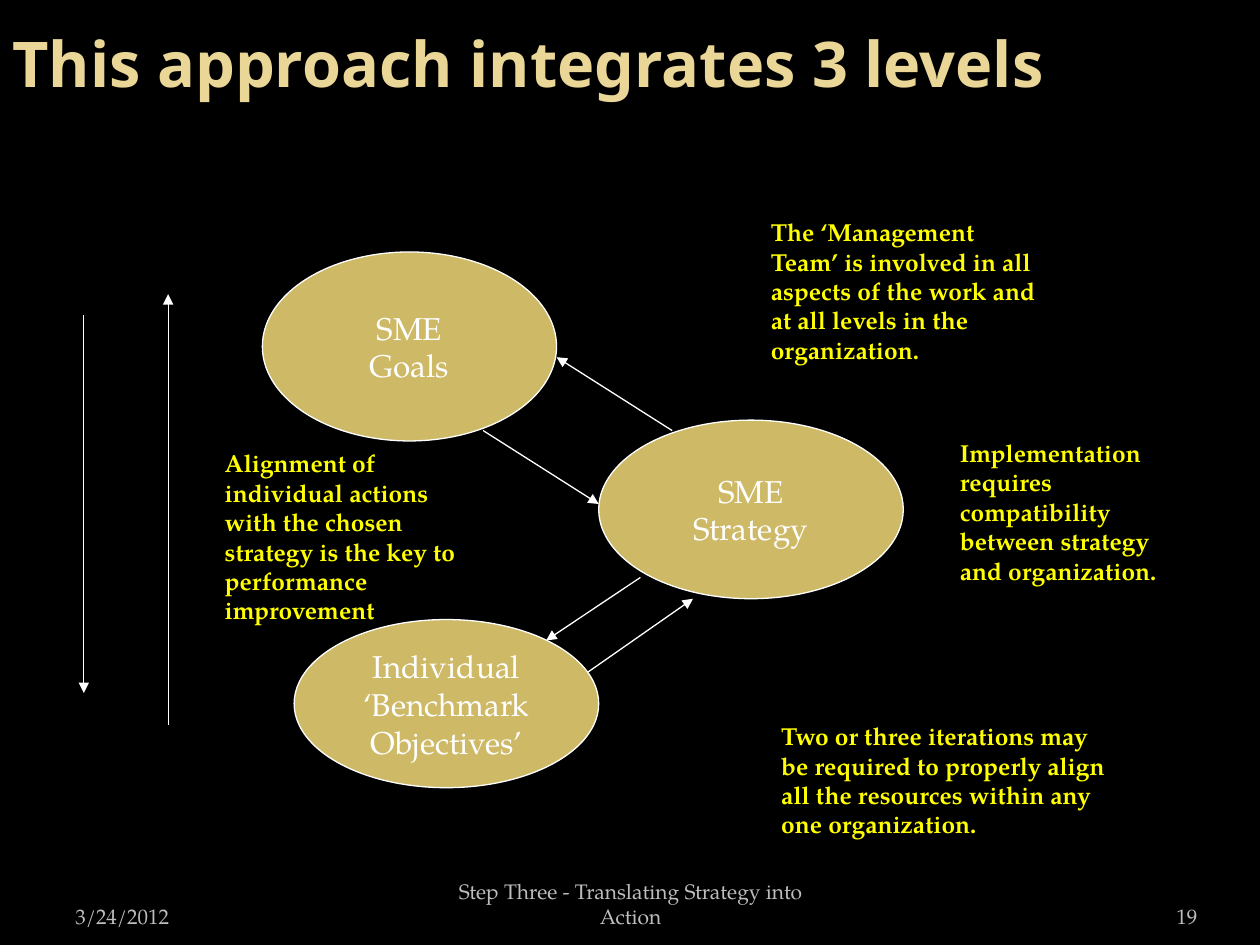
from lxml import etree
from pptx import Presentation
from pptx.dml.color import RGBColor
from pptx.enum.shapes import MSO_CONNECTOR, MSO_SHAPE
from pptx.enum.text import MSO_ANCHOR, MSO_AUTO_SIZE, PP_ALIGN
from pptx.oxml.ns import qn
from pptx.util import Cm, Pt

OVAL, STRAIGHT = MSO_SHAPE.OVAL, MSO_CONNECTOR.STRAIGHT
TOP, MIDDLE, BOTTOM = MSO_ANCHOR.TOP, MSO_ANCHOR.MIDDLE, MSO_ANCHOR.BOTTOM
LEFT, CENTER, RIGHT = PP_ALIGN.LEFT, PP_ALIGN.CENTER, PP_ALIGN.RIGHT
NO_FIT, GROW = MSO_AUTO_SIZE.NONE, MSO_AUTO_SIZE.SHAPE_TO_FIT_TEXT
TITLE_ONLY = 5

COLORS = {
    "background": "000000",
    "title": "EAD696",
    "oval": "CEB966",
    "white": "FFFFFF",
    "note": "FFFF00",
    "footer": "BDBDBD",
}
HEADING_FONT, BODY_FONT = "Noto Sans", "TeX Gyre Pagella"
WIDE_INSETS = (0.3, 0.15)
PLAIN_INSETS = (0.25, 0.13)


def color(name):
    return RGBColor.from_string(COLORS[name])


class SlideBuilder:
    """Holds the style and the current slide."""

    def __init__(self, presentation):
        layout = presentation.slide_layouts[TITLE_ONLY]
        self.slide = presentation.slides.add_slide(layout)
        self.shapes = self.slide.shapes
        fill = self.slide.background.fill
        fill.solid()
        fill.fore_color.rgb = color("background")

    def set_text(self, shape, lines, size, color_name, font=BODY_FONT, bold=False,
                 align=LEFT, anchor=TOP, insets=PLAIN_INSETS, wrap=True, fit=NO_FIT):
        frame = shape.text_frame
        frame.text = "\n".join(lines)
        horizontal, vertical = map(Cm, insets)
        frame_format = {
            "margin_left": horizontal, "margin_right": horizontal,
            "margin_top": vertical, "margin_bottom": vertical,
            "vertical_anchor": anchor, "word_wrap": wrap, "auto_size": fit,
        }
        for name, value in frame_format.items():
            setattr(frame, name, value)
        font_format = {"name": font, "size": Pt(size), "bold": bold}
        for paragraph in frame.paragraphs:
            paragraph.alignment = align
            for run in paragraph.runs:
                for name, value in font_format.items():
                    setattr(run.font, name, value)
                run.font.color.rgb = color(color_name)

    def title(self, text, left, top, width, height):
        title = self.shapes.title
        position = {"left": left, "top": top, "width": width, "height": height}
        for name, value in position.items():
            setattr(title, name, Cm(value))
        self.set_text(title, [text], 36, "title", font=HEADING_FONT, bold=True,
                      anchor=MIDDLE)

    def text_box(self, text, box, **style):
        shape = self.shapes.add_textbox(*map(Cm, box))
        self.set_text(shape, [text], **style)

    def footer(self, text, left, width, align, insets=PLAIN_INSETS):
        self.text_box(text, (left, 17.83, width, 1.02), size=12,
                      color_name="footer", align=align, anchor=BOTTOM,
                      insets=insets)

    def note(self, text, *box):
        self.text_box(text, box, size=14, color_name="note", bold=True,
                      insets=WIDE_INSETS, fit=GROW)

    def oval(self, lines, *box):
        shape = self.shapes.add_shape(OVAL, *map(Cm, box))
        shape.shadow.inherit = False
        shape.fill.solid()
        shape.fill.fore_color.rgb = color("oval")
        self.outline(shape)
        self.set_text(shape, lines, 18, "white", align=CENTER, anchor=MIDDLE,
                      insets=WIDE_INSETS, wrap=False)

    def arrow(self, *ends):
        connector = self.shapes.add_connector(STRAIGHT, *map(Cm, ends))
        self.outline(connector)
        properties = connector.element.spPr
        etree.SubElement(properties.find(qn("a:ln")), qn("a:tailEnd"),
                         type="triangle")
        etree.SubElement(properties, qn("a:effectLst"))

    def outline(self, shape):
        shape.line.color.rgb = color("white")
        shape.line.width = Pt(0.75)


def main():
    presentation = Presentation()
    presentation.slide_width, presentation.slide_height = Cm(25.4), Cm(19.05)
    builder = SlideBuilder(presentation)

    # Title
    builder.title("This approach integrates 3 levels", 0, -0.64, 25.4, 3.81)

    # Footer
    builder.footer("3/24/2012", 1.27, 5.92, LEFT)
    builder.footer("Step Three - Translating Strategy into Action",
                   8.69, 8.05, CENTER)
    builder.footer("19", 22.02, 2.12, RIGHT, insets=(0, 0.13))

    # Three levels
    builder.oval(["Individual", "‘Benchmark", "Objectives’"],
                 5.93, 12.49, 6.14, 3.39)
    builder.oval(["SME", "Strategy"], 12.07, 8.47, 6.14, 3.6)
    builder.oval(["SME", "Goals"], 5.29, 5.08, 5.93, 3.81)

    # Arrows between the levels, then the two long ones at the left
    for ends in (
        (9.74, 8.68, 12.07, 10.16),
        (12.91, 11.64, 11.01, 12.91),
        (11.85, 13.55, 13.97, 12.07),
        (13.55, 8.68, 11.22, 7.2),
        (1.69, 6.35, 1.69, 13.97),
        (3.39, 14.61, 3.39, 5.93),
    ):
        builder.arrow(*ends)

    # Notes
    builder.note("Two or three iterations may be required to properly align "
                 "all the resources within any one organization.",
                 15.45, 14.39, 7.2, 2.69)
    builder.note("The ‘Management Team’ is involved in all aspects of the work "
                 "and at all levels in the organization.",
                 15.24, 4.23, 6.14, 2.69)
    builder.note("Alignment of individual actions with the chosen strategy is "
                 "the key to performance improvement",
                 4.23, 8.89, 5.5, 3.28)
    builder.note("Implementation requires compatibility between strategy and "
                 "organization.",
                 19.05, 8.68, 5.29, 2.69)

    presentation.save("out.pptx")


if __name__ == "__main__":
    main()
